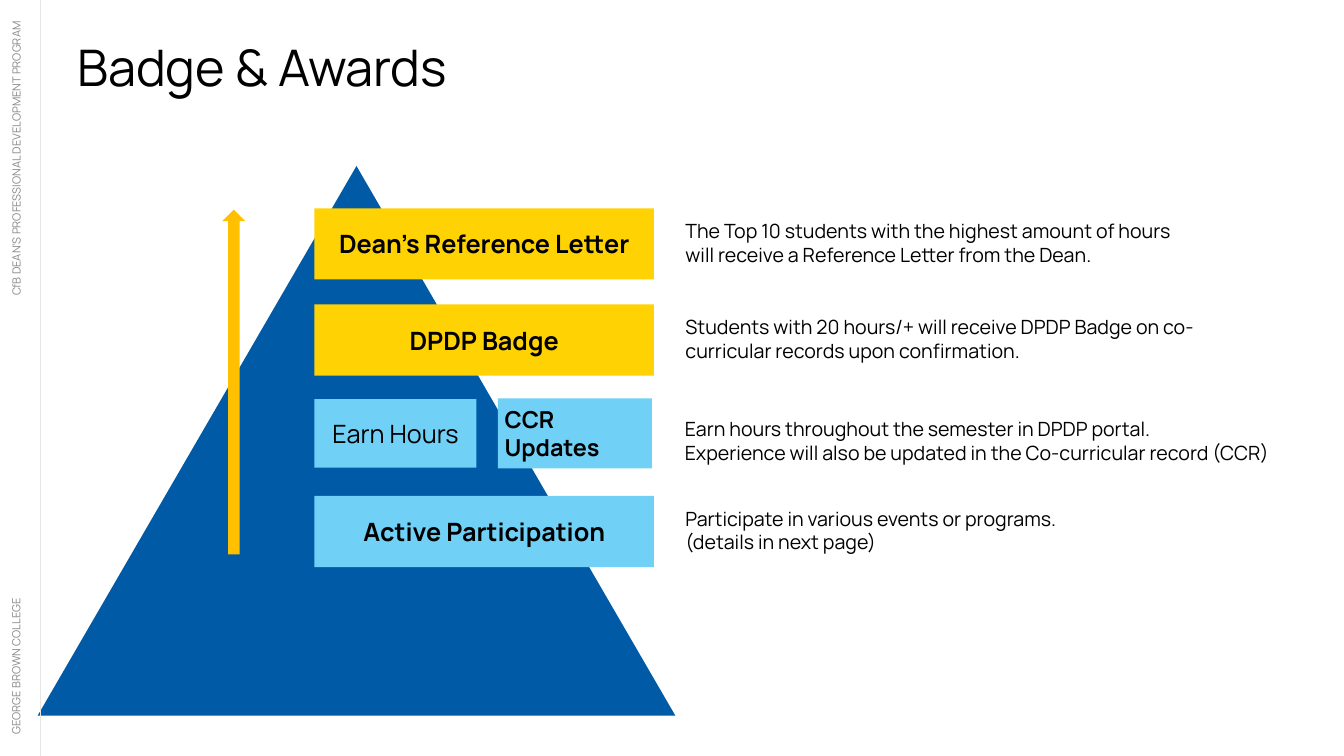
from pptx import Presentation
from pptx.dml.color import RGBColor
from pptx.enum import shapes, text
from pptx.oxml.ns import qn
from pptx.util import Pt
from lxml import etree

PX = 9144  # EMU per px, 100 px to the inch
KIND = shapes.MSO_SHAPE
ALIGN = text.PP_ALIGN
MID = text.MSO_ANCHOR.MIDDLE
BLUE, SKY, GOLD, AMBER = "005AA5", "70D0F6", "FFD204", "FFC000"
GREY, RULE = "898989", "E7E6E6"


def color(code):
    return RGBColor.from_string(code)


def write(shape, words, size=21, bold=False, ink="000000", align=ALIGN.LEFT,
          lead=None, pad=(0, 0), anchor=text.MSO_ANCHOR.TOP):
    """Fill a shape with one paragraph per line of words."""
    frame = shape.text_frame
    frame.word_wrap = True
    frame.vertical_anchor = anchor
    frame.margin_left = frame.margin_right = pad[0] * PX
    frame.margin_top = frame.margin_bottom = pad[1] * PX
    for i, line in enumerate(words.split("\n")):
        para = frame.add_paragraph() if i else frame.paragraphs[0]
        para.alignment = align
        if lead:
            para.line_spacing = Pt(lead)
        run = para.add_run()
        run.text = line
        font = run.font
        font.name, font.size, font.bold = "Manrope", Pt(size), bold
        font.color.rgb = color(ink)
    return shape


class Deck:
    def __init__(self, wide, high):
        self.show = Presentation()
        self.show.slide_width = wide * PX
        self.show.slide_height = high * PX
        self.slide = self.show.slides.add_slide(self.show.slide_layouts[6])

    def shape(self, kind, x, y, w, h, fill):
        item = self.slide.shapes.add_shape(kind, x * PX, y * PX, w * PX, h * PX)
        item.shadow.inherit = False
        item.fill.solid()
        item.fill.fore_color.rgb = color(fill)
        item.line.fill.background()
        return item

    def bar(self, x, y, w, h, fill, words, **style):
        look = dict(size=27, bold=True, align=ALIGN.CENTER, lead=32.4,
                    pad=(6, 6), anchor=MID)
        return write(self.shape(KIND.RECTANGLE, x, y, w, h, fill),
                     words, **{**look, **style})

    def label(self, x, y, w, h, words, turn=0, **style):
        box = self.slide.shapes.add_textbox(x * PX, y * PX, w * PX, h * PX)
        box.rotation = turn
        return write(box, words, **style)

    def line(self, x1, y1, x2, y2, ink, width):
        link = self.slide.shapes.add_connector(
            shapes.MSO_CONNECTOR.STRAIGHT, x1 * PX, y1 * PX, x2 * PX, y2 * PX)
        link.line.color.rgb = color(ink)
        link.line.width = Pt(width)
        etree.SubElement(link._element.spPr, qn("a:effectLst"))


def main():
    deck = Deck(2000, 1125)

    # Pyramid and title
    deck.shape(KIND.ISOSCELES_TRIANGLE, 56, 247, 949, 818, BLUE)
    deck.label(115, 63, 1820, 89, "Badge & Awards", size=54, lead=58.3)

    # Full-width levels with their notes
    levels = [
        (310, GOLD, "Dean’s Reference Letter",
         "The Top 10 students with the highest amount of hours "
         "will receive a Reference Letter from the Dean."),
        (453, GOLD, "DPDP Badge",
         "Students with 20 hours/+ will receive DPDP Badge on "
         "co-curricular records upon confirmation."),
        (738, SKY, "Active Participation",
         "Participate in various events or programs.\n"
         "(details in next page)"),
    ]
    for top, fill, name, note in levels:
        deck.bar(468, top, 505, 106, fill, name)
        deck.label(1020, top + 16, 763, 71, note, lead=25.2)

    # Split level
    deck.bar(468, 594, 241, 102, SKY, "Earn Hours", bold=False)
    deck.bar(741, 593, 229, 104, SKY, "CCR\nUpdates", size=25,
             align=ALIGN.LEFT, lead=None, pad=(10, 5))
    note = deck.label(
        1019, 621, 958, 70,
        "Earn hours throughout the semester in DPDP portal.\n"
        "Experience will also be updated in the Co-curricular record (CCR)",
        lead=25.2)
    note.text_frame.paragraphs[0].line_spacing = None

    # Side strip
    side = dict(turn=270, size=12, ink=GREY, lead=14.4)
    deck.label(-206, 841, 471, 32, "GEORGE BROWN COLLEGE", **side)
    deck.label(-211, 257, 471, 21,
               "CfB DEAN’S PROFESSIONAL DEVELOPMENT PROGRAM",
               align=ALIGN.RIGHT, **side)
    deck.line(60, 0, 60, 1125, RULE, 0.75)

    # Climb arrow
    deck.shape(KIND.UP_ARROW, 331, 312, 34, 513, AMBER)

    deck.show.save("out.pptx")


if __name__ == "__main__":
    main()
